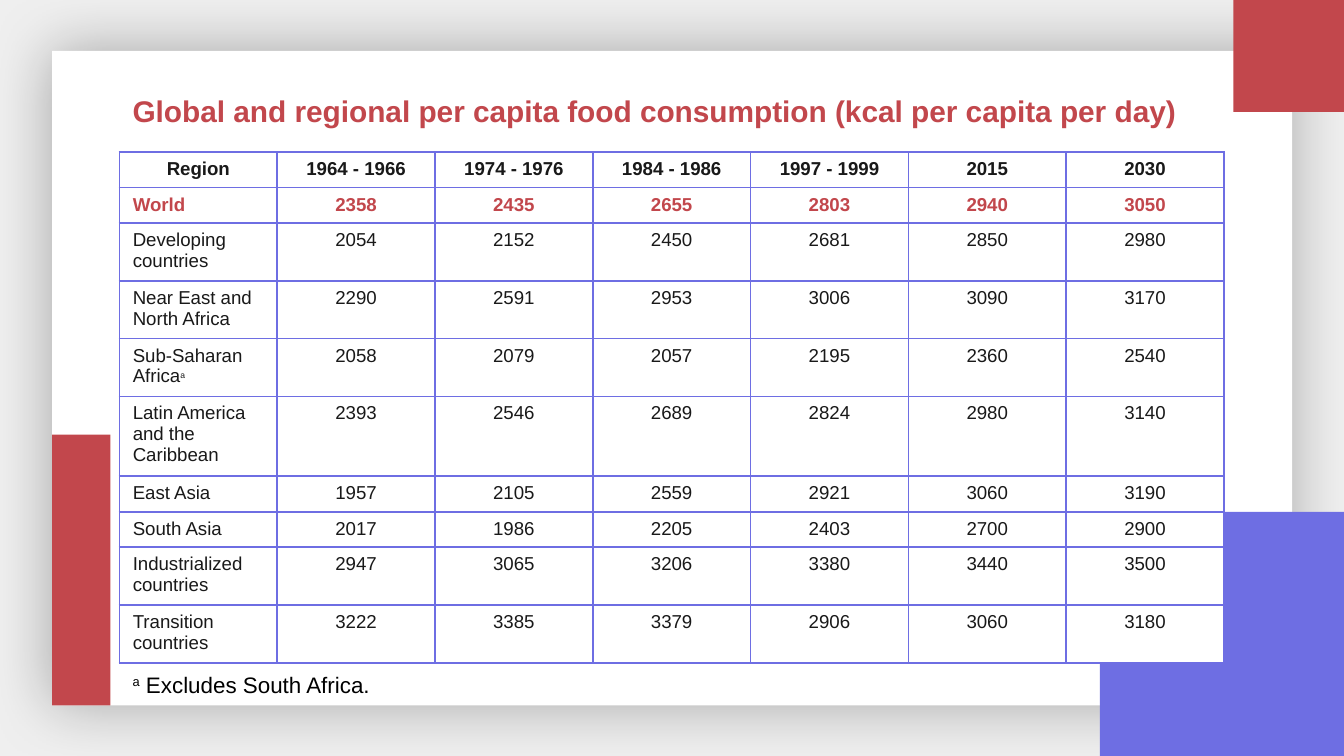
from lxml.etree import SubElement
from pptx import Presentation
from pptx.dml.color import RGBColor
from pptx.enum.shapes import MSO_SHAPE
from pptx.enum.text import PP_ALIGN
from pptx.oxml.ns import qn
from pptx.util import Inches, Pt

RED, BLUE, WHITE, INK, BLACK = "C2474C", "6E6EE3", "FFFFFF", "191919", "000000"

HEAD = ["Region", "1964 - 1966", "1974 - 1976", "1984 - 1986", "1997 - 1999", "2015", "2030"]
DATA = [
    ("World", 1, [2358, 2435, 2655, 2803, 2940, 3050]),
    ("Developing countries", 2, [2054, 2152, 2450, 2681, 2850, 2980]),
    ("Near East and North Africa", 2, [2290, 2591, 2953, 3006, 3090, 3170]),
    ("Sub-Saharan Africa", 2, [2058, 2079, 2057, 2195, 2360, 2540]),
    ("Latin America and the Caribbean", 3, [2393, 2546, 2689, 2824, 2980, 3140]),
    ("East Asia", 1, [1957, 2105, 2559, 2921, 3060, 3190]),
    ("South Asia", 1, [2017, 1986, 2205, 2403, 2700, 2900]),
    ("Industrialized countries", 2, [2947, 3065, 3206, 3380, 3440, 3500]),
    ("Transition countries", 2, [3222, 3385, 3379, 2906, 3060, 3180]),
]


def tint(code):
    return RGBColor.from_string(code)


class Deck:
    font = "Arial"
    pad, line = 1.76, 2.94

    def __init__(self, wide):
        self.show = Presentation()
        self.show.slide_width, self.show.slide_height = Inches(wide), Inches(wide * 9 / 16)
        self.slide = self.show.slides.add_slide(self.show.slide_layouts[6])

    def back(self, color):
        fill = self.slide.background.fill
        fill.solid()
        fill.fore_color.rgb = tint(color)

    def across(self, share):
        return round(self.show.slide_width * share / 100)

    def down(self, share):
        return round(self.show.slide_height * share / 100)

    def area(self, x, y, w, h):
        return self.across(x), self.down(y), self.across(w), self.down(h)

    def block(self, box, color):
        shape = self.slide.shapes.add_shape(MSO_SHAPE.RECTANGLE, *self.area(*box))
        shape.shadow.inherit = False
        shape.fill.solid()
        shape.fill.fore_color.rgb = tint(color)
        shape.line.fill.background()
        return shape

    def glow(self, shape, blur, alpha):
        effects = shape.element.spPr.find(qn("a:effectLst"))
        shade = SubElement(effects, qn("a:outerShdw"), blurRad=str(Pt(blur)), dist="0", dir="0",
                           algn="ctr", rotWithShape="0")
        color = SubElement(shade, qn("a:srgbClr"), val=BLACK)
        SubElement(color, qn("a:alpha"), val=str(alpha * 1000))

    def style(self, run, size, color, bold=False, raised=False):
        font = run.font
        font.name, font.size, font.bold = self.font, Pt(size), bold
        font.color.rgb = tint(color)
        if raised:
            run._r.get_or_add_rPr().set("baseline", "30000")

    def text(self, box, words, size, color, bold=False, raised=False):
        frame = self.slide.shapes.add_textbox(*self.area(*box)).text_frame
        frame.word_wrap = True
        para = frame.paragraphs[0]
        para.text = words
        self.style(para.runs[0], size, color, bold, raised)
        return para

    def add(self, para, words, size, color, raised=False):
        run = para.add_run()
        run.text = words
        self.style(run, size, color, raised=raised)

    def edge(self, cell, color):
        props = cell._tc.get_or_add_tcPr()
        for side in ("lnL", "lnR", "lnT", "lnB"):
            line = SubElement(props, qn("a:" + side), w=str(Pt(1)))
            SubElement(SubElement(line, qn("a:solidFill")), qn("a:srgbClr"), val=color)

    def cell(self, cell, words, color, bold, align):
        self.edge(cell, BLUE)
        cell.fill.solid()
        cell.fill.fore_color.rgb = tint(WHITE)
        cell.margin_left = cell.margin_right = Inches(0.1)
        cell.margin_top = cell.margin_bottom = Inches(0.05)
        para = cell.text_frame.paragraphs[0]
        para.text = words
        para.alignment = align
        self.style(para.runs[0], 10, color, bold)

    def table(self, x, y, wide, head, data):
        rows = [(head, 1)] + [([name, *map(str, nums)], lines) for name, lines, nums in data]
        highs = [self.pad + self.line * lines for _, lines in rows]
        box = self.area(x, y, wide, sum(highs))
        grid = self.slide.shapes.add_table(len(rows), len(head), *box).table
        grid.first_row = grid.horz_banding = False
        for col in grid.columns:
            col.width = self.across(wide / len(head))
        for r, (words, _) in enumerate(rows):
            grid.rows[r].height = self.down(highs[r])
            for c, word in enumerate(words):
                align = PP_ALIGN.LEFT if r and not c else PP_ALIGN.CENTER
                self.cell(grid.cell(r, c), word, RED if r == 1 else INK, r < 2, align)
        return grid


def main():
    deck = Deck(10)
    deck.back("EFEFEF")
    card = deck.block((3.87, 6.73, 92.27, 86.57), WHITE)
    deck.glow(card, 33.8, 30)
    deck.block((81.84, 67.72, 18.16, 32.28), BLUE)
    deck.block((91.78, 0, 8.22, 14.8), RED)
    deck.block((3.87, 57.5, 4.35, 35.8), RED)

    grid = deck.table(8.88, 20.12, 82.2, HEAD, DATA)
    deck.add(grid.cell(4, 0).text_frame.paragraphs[0], "a", 8, INK, raised=True)

    deck.text((8.88, 11.4, 80.8, 17.4),
              "Global and regional per capita food consumption (kcal per capita per day)", 16, RED, True)
    note = deck.text((8.88, 87.85, 29.6, 5.4), "a", 12, BLACK, raised=True)
    deck.add(note, " Excludes South Africa.", 12, BLACK)
    deck.show.save("out.pptx")


if __name__ == "__main__":
    main()
